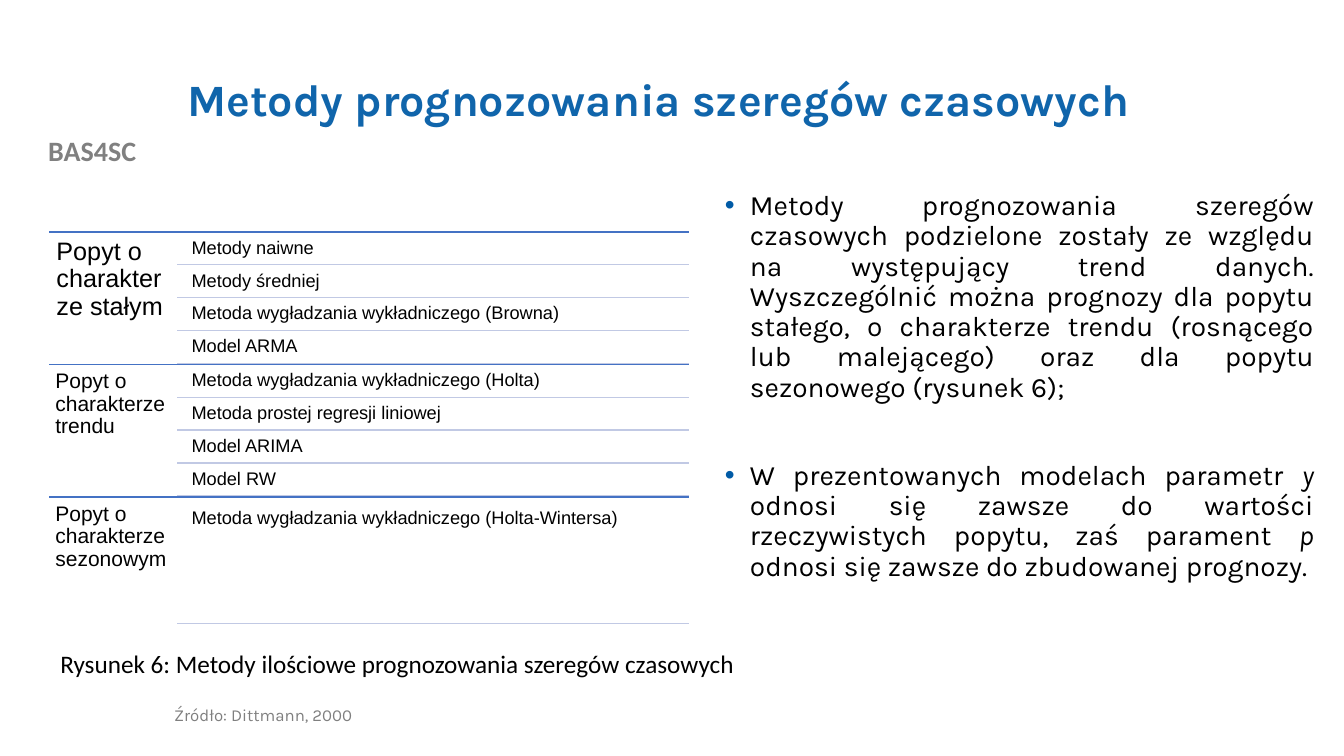
from lxml import etree
from pptx import Presentation
from pptx.dml.color import RGBColor
from pptx.enum.shapes import MSO_CONNECTOR
from pptx.enum.text import MSO_ANCHOR, PP_ALIGN
from pptx.oxml.ns import qn
from pptx.util import Inches, Pt

STRAIGHT = MSO_CONNECTOR.STRAIGHT
MIDDLE, TOP = MSO_ANCHOR.MIDDLE, MSO_ANCHOR.TOP
LEFT, CENTER, JUSTIFY = PP_ALIGN.LEFT, PP_ALIGN.CENTER, PP_ALIGN.JUSTIFY

BLUE = RGBColor(0x10, 0x65, 0xAB)
RULE_BLUE = RGBColor(0x44, 0x72, 0xC4)
RULE_PALE = RGBColor(0xC1, 0xC9, 0xE4)
GREY = RGBColor(0x80, 0x80, 0x80)
SOURCE_GREY = RGBColor(0x7F, 0x7F, 0x7F)
BLACK = RGBColor(0, 0, 0)
BULLET_HEX = "015BA6"

# Content
PROJECT = "BAS4SC"
TITLE = "Metody prognozowania szeregów czasowych"
CAPTION = "Rysunek 6: Metody ilościowe prognozowania szeregów czasowych"
SOURCE = "Źródło: Dittmann, 2000"

# Each bullet is a list of (text, italic)
BULLETS = [
    [("Metody prognozowania szeregów czasowych podzielone zostały ze względu "
      "na występujący trend danych. Wyszczególnić można prognozy dla popytu "
      "stałego, o charakterze trendu (rosnącego lub malejącego) oraz dla "
      "popytu sezonowego (rysunek 6);", False)],
    [("W prezentowanych modelach parametr ", False), ("y", True),
     (" odnosi się zawsze do wartości rzeczywistych popytu, zaś parament ", False),
     ("p ", True), ("odnosi się zawsze do zbudowanej prognozy.", False)],
]

# Demand type, its text size and inset, gap above a row, row height, methods
GROUPS = [
    ("Popyt o charakterze stałym", 18, 0.07, 0.016, 0.31,
     ["Metody naiwne", "Metody średniej",
      "Metoda wygładzania wykładniczego (Browna)", "Model ARMA"]),
    ("Popyt o charakterze trendu", 15, 0.06, 0.016, 0.31,
     ["Metoda wygładzania wykładniczego (Holta)",
      "Metoda prostej regresji liniowej", "Model ARIMA", "Model RW"]),
    ("Popyt o charakterze sezonowym", 15, 0.06, 0.066, 1.19,
     ["Metoda wygładzania wykładniczego (Holta-Wintersa)"]),
]

# Layout of the method overview, in inches
OVERVIEW_LEFT, OVERVIEW_RIGHT, OVERVIEW_TOP = 0.49, 6.83, 2.3
GROUP_HEIGHT, TYPE_WIDTH, METHOD_INDENT = 1.315, 1.27, 0.09


def add_box(page, left, top, width, height, inset=None, anchor=TOP):
    box = page.shapes.add_textbox(Inches(left), Inches(top),
                                  Inches(width), Inches(height))
    frame = box.text_frame
    frame.word_wrap = True
    frame.vertical_anchor = anchor
    if inset is not None:
        frame.margin_left = frame.margin_right = Inches(inset)
        frame.margin_top = frame.margin_bottom = Inches(inset)
    return frame


def style(span, font, size, color, bold=False, italic=False):
    span.font.name = font
    span.font.size = Pt(size)
    span.font.color.rgb = color
    span.font.bold = bold
    span.font.italic = italic


def add_text(page, text, place, font, size, color, bold=False, align=LEFT,
             spacing=0.9, inset=None, anchor=TOP):
    frame = add_box(page, *place, inset=inset, anchor=anchor)
    frame.text = text
    para = frame.paragraphs[0]
    para.alignment = align
    para.line_spacing = spacing
    style(para.runs[0], font, size, color, bold)


def add_rule(page, left, y, color):
    rule = page.shapes.add_connector(STRAIGHT, Inches(left), Inches(y),
                                     Inches(OVERVIEW_RIGHT), Inches(y))
    rule.line.color.rgb = color
    rule.line.width = Pt(1)
    etree.SubElement(rule._element.spPr, qn("a:effectLst"))


def add_bullet(para):
    props = para._p.get_or_add_pPr()
    props.set("marL", str(Inches(0.25)))
    props.set("indent", str(-Inches(0.25)))
    color = etree.SubElement(props, qn("a:buClr"))
    etree.SubElement(color, qn("a:srgbClr"), val=BULLET_HEX)
    etree.SubElement(props, qn("a:buFont"), typeface="Arial")
    etree.SubElement(props, qn("a:buChar"), char="•")


def add_overview(page):
    method_left = OVERVIEW_LEFT + TYPE_WIDTH
    text_left = method_left + METHOD_INDENT
    for index, (name, size, inset, gap, height, methods) in enumerate(GROUPS):
        top = OVERVIEW_TOP + index * GROUP_HEIGHT
        add_rule(page, OVERVIEW_LEFT, top, RULE_BLUE)
        add_text(page, name, (OVERVIEW_LEFT, top, TYPE_WIDTH, GROUP_HEIGHT),
                 "Arial", size, BLACK, inset=inset)
        for row, method in enumerate(methods):
            row_top = top + gap + row * (gap + height)
            place = (text_left, row_top, OVERVIEW_RIGHT - text_left, height)
            add_text(page, method, place, "Arial", 13, BLACK, inset=0.05)
            add_rule(page, method_left, row_top + height, RULE_PALE)


def add_explanation(page):
    frame = add_box(page, 7.09, 1.85, 6.04, 4.56)
    for index, parts in enumerate(BULLETS):
        para = frame.add_paragraph() if index else frame.paragraphs[0]
        para.alignment = JUSTIFY
        para.line_spacing = 0.9
        if index:
            para.space_before = Pt(41.5)
        add_bullet(para)
        for text, italic in parts:
            span = para.add_run()
            span.text = text
            style(span, "Karla", 20, BLACK, italic=italic)


def main():
    deck = Presentation()
    deck.slide_width, deck.slide_height = Inches(13.33), Inches(7.5)
    page = deck.slides.add_slide(deck.slide_layouts[6])

    # Heading
    add_text(page, PROJECT, (0, 1.28, 1.83, 0.44), "Calibri", 20, GREY,
             bold=True, align=CENTER, spacing=1.0)
    add_text(page, TITLE, (1.76, 0.4, 10.66, 1.22), "Karla", 32, BLUE,
             bold=True, anchor=MIDDLE)

    # Methods on the left, explanation on the right
    add_overview(page)
    add_explanation(page)

    # Caption and source
    add_text(page, CAPTION, (0.5, 6.38, 6.97, 0.4), "Calibri", 18, BLACK,
             spacing=1.0)
    add_text(page, SOURCE, (1.63, 6.96, 6.67, 0.28), "Karla", 12, SOURCE_GREY)
    deck.save("out.pptx")


if __name__ == "__main__":
    main()
